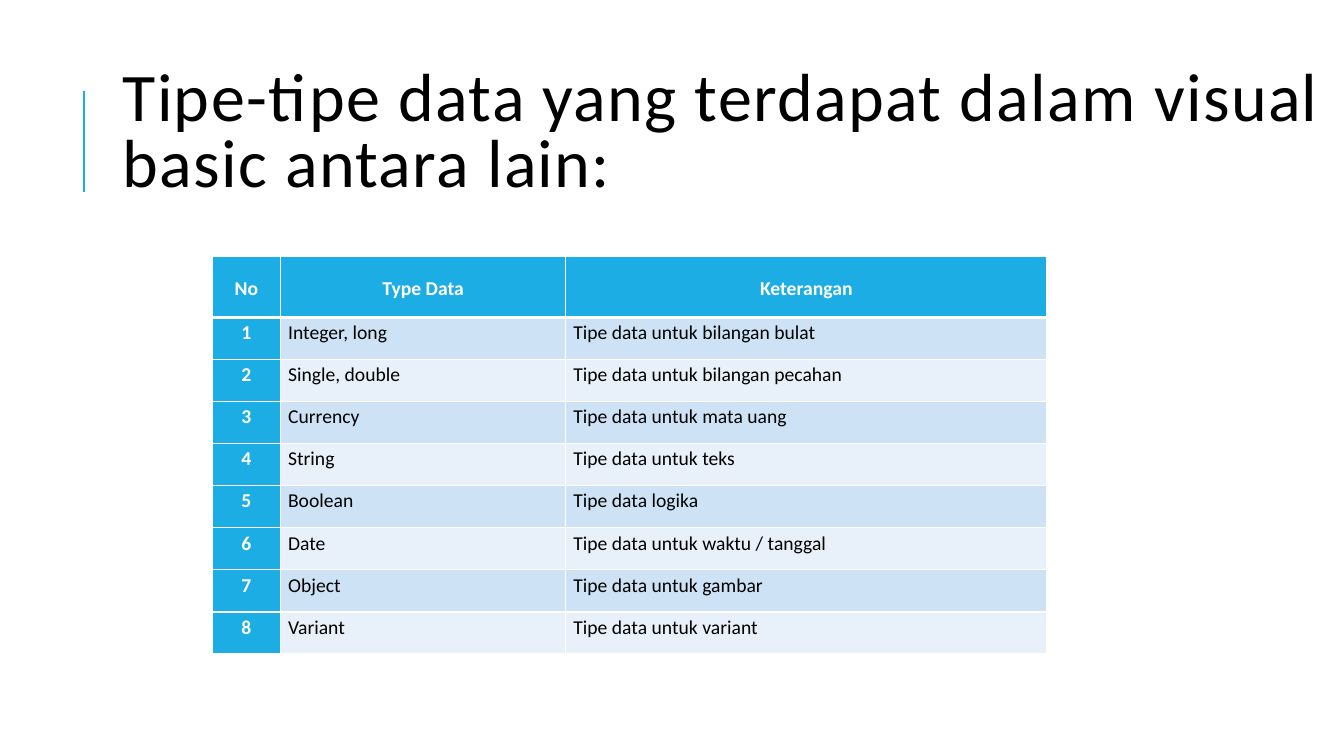
import pptx
import pptx.util
import pptx.dml.color
import pptx.enum.shapes
import pptx.enum.text
import pptx.oxml.ns
import lxml.etree
from pptx.util import Cm

TITLE = "Tipe-tipe data yang terdapat dalam visual basic antara lain:"
HEADINGS = ("No", "Type Data", "Keterangan")
DATA_TYPES = [
    ("Integer, long", "Tipe data untuk bilangan bulat"),
    ("Single, double", "Tipe data untuk bilangan pecahan"),
    ("Currency", "Tipe data untuk mata uang"),
    ("String", "Tipe data untuk teks"),
    ("Boolean", "Tipe data logika"),
    ("Date", "Tipe data untuk waktu / tanggal"),
    ("Object", "Tipe data untuk gambar"),
    ("Variant", "Tipe data untuk variant"),
]
COLORS = {"accent": "1CADE4", "odd": "CDE3F5", "even": "E8F1FA",
          "white": "FFFFFF", "black": "000000"}
FONT = "Calibri"
COLUMN_WIDTHS = (1.72, 7.19, 12.12)
HEADER_HEIGHT, ROW_HEIGHT = 1.55, 1.06


def rgb(name):
    return pptx.dml.color.RGBColor.from_string(COLORS[name])


def style_text(paragraph, size, color, bold, line_spacing):
    paragraph.line_spacing = line_spacing
    for run in paragraph.runs:
        run.font.name = FONT
        run.font.size = pptx.util.Pt(size)
        run.font.bold = bold
        run.font.color.rgb = rgb(color)


def add_border(cell, side, points):
    properties = cell._tc.get_or_add_tcPr()
    border = lxml.etree.SubElement(properties, pptx.oxml.ns.qn(f"a:ln{side}"),
                                   w=str(pptx.util.Pt(points)))
    fill = lxml.etree.SubElement(border, pptx.oxml.ns.qn("a:solidFill"))
    lxml.etree.SubElement(fill, pptx.oxml.ns.qn("a:srgbClr"), val=COLORS["white"])


def fill_cell(cell, text, row, column):
    is_header = row == 0
    is_label = is_header or column == 0
    thick_sides = {0: "B", 1: "T"}
    for side in "LRTB":
        add_border(cell, side, 3 if thick_sides.get(row) == side else 1)
    cell.fill.solid()
    cell.fill.fore_color.rgb = rgb("accent" if is_label else "odd" if row % 2 else "even")
    cell.margin_left = cell.margin_right = Cm(0.19)
    cell.margin_top = cell.margin_bottom = 0
    anchors = pptx.enum.text.MSO_ANCHOR
    cell.vertical_anchor = anchors.MIDDLE if is_header else anchors.TOP
    paragraph = cell.text_frame.paragraphs[0]
    paragraph.text = text
    alignments = pptx.enum.text.PP_ALIGN
    paragraph.alignment = alignments.CENTER if is_label else alignments.JUSTIFY
    style_text(paragraph, 14, "white" if is_label else "black", is_label, 1.15)


def main():
    presentation = pptx.Presentation()
    presentation.slide_width, presentation.slide_height = Cm(33.87), Cm(19.05)
    slide = presentation.slides.add_slide(presentation.slide_layouts[6])

    # Accent line beside the title
    accent = slide.shapes.add_connector(
        pptx.enum.shapes.MSO_CONNECTOR.STRAIGHT, Cm(2.12), Cm(4.84), Cm(2.12), Cm(2.3))
    accent.line.color.rgb = rgb("accent")
    accent.line.width = pptx.util.Pt(1.5)
    lxml.etree.SubElement(accent._element.spPr, pptx.oxml.ns.qn("a:effectLst"))

    # Title
    title = slide.shapes.add_textbox(Cm(2.84), Cm(1.63), Cm(33.5), Cm(5.36)).text_frame
    title.word_wrap = True
    title.vertical_anchor = pptx.enum.text.MSO_ANCHOR.TOP
    title.text = TITLE
    style_text(title.paragraphs[0], 48.6, "black", False, 0.8)
    title.paragraphs[0].runs[0].font._element.set("spc", "100")

    # Table of data types
    rows = [HEADINGS] + [(str(number), *entry) for number, entry in enumerate(DATA_TYPES, 1)]
    table_height = HEADER_HEIGHT + ROW_HEIGHT * len(DATA_TYPES)
    table = slide.shapes.add_table(len(rows), len(HEADINGS), Cm(5.35), Cm(6.45),
                                   Cm(sum(COLUMN_WIDTHS)), Cm(table_height)).table
    for column, width in zip(table.columns, COLUMN_WIDTHS):
        column.width = Cm(width)
    for row, texts in enumerate(rows):
        table.rows[row].height = Cm(ROW_HEIGHT if row else HEADER_HEIGHT)
        for column, text in enumerate(texts):
            fill_cell(table.cell(row, column), text, row, column)

    presentation.save("out.pptx")


if __name__ == "__main__":
    main()
